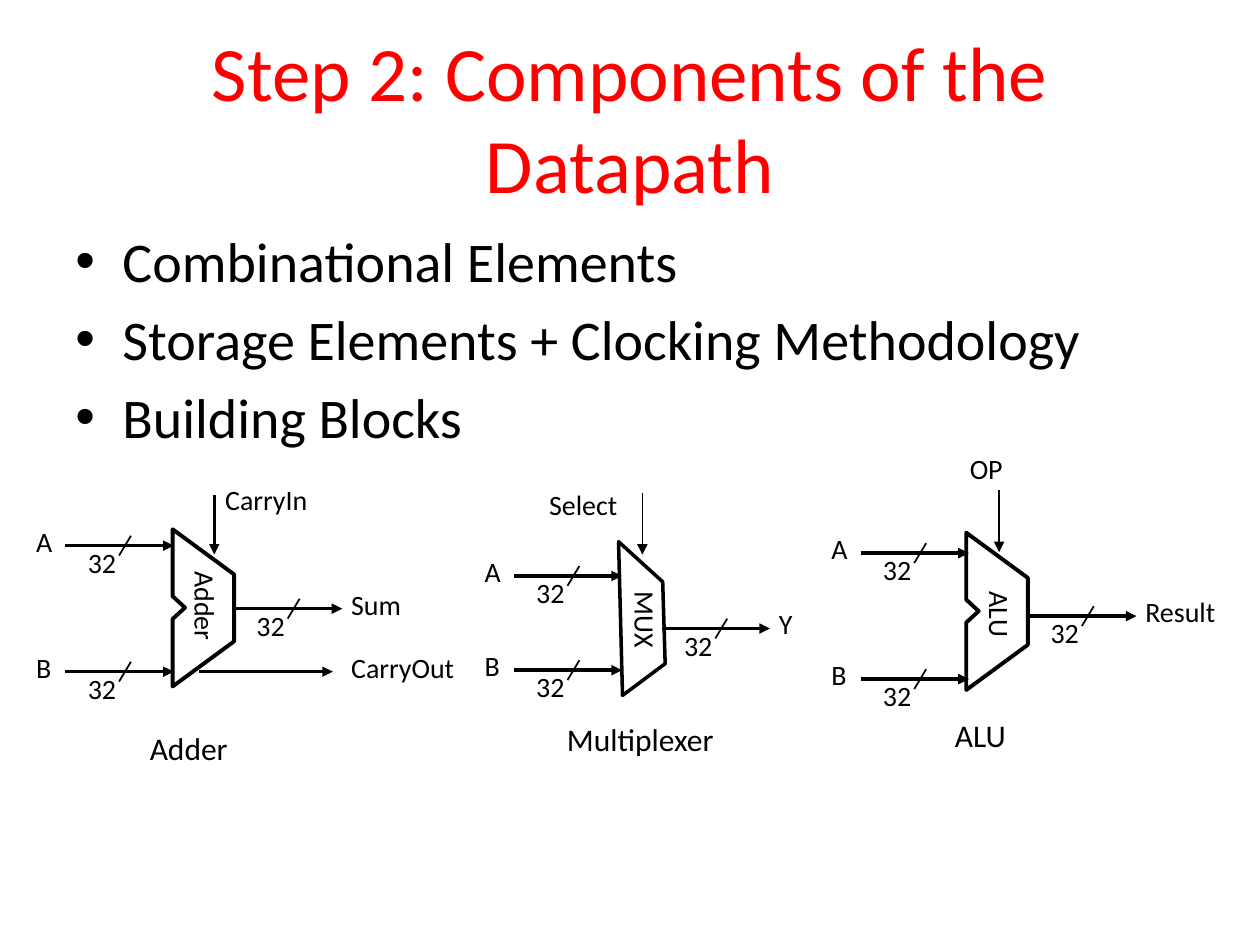
from dataclasses import dataclass
from lxml.etree import SubElement
from pptx import Presentation
from pptx.dml.color import RGBColor
from pptx.enum.shapes import MSO_CONNECTOR
from pptx.enum.text import MSO_ANCHOR, MSO_AUTO_SIZE, PP_ALIGN
from pptx.oxml.ns import qn
from pptx.util import Cm, Pt


@dataclass(frozen=True)
class Theme:
    font: str = "Calibri"
    red: RGBColor = RGBColor(255, 0, 0)
    black: RGBColor = RGBColor(0, 0, 0)
    title: int = 44
    body: int = 32
    name: int = 18
    label: int = 16
    thick: float = 2
    thin: float = 1


theme = Theme()


def text(home, words, left, top, width, high=0.94, size=theme.label,
         color=theme.black, align=PP_ALIGN.LEFT, anchor=MSO_ANCHOR.TOP,
         wrap=False, fit=MSO_AUTO_SIZE.SHAPE_TO_FIT_TEXT, turn=0, bullet=None):
    box = home.add_textbox(Cm(left), Cm(top), Cm(width), Cm(high))
    box.rotation = turn
    frame = box.text_frame
    frame.text = words
    frame.word_wrap = wrap
    frame.auto_size = fit
    frame.vertical_anchor = anchor
    for para in frame.paragraphs:
        para.alignment = align
        font = para.runs[0].font
        font.name, font.size, font.color.rgb = theme.font, Pt(size), color
        if bullet:
            para.space_before = Pt(6)
            props = para._p.get_or_add_pPr()
            props.set("marL", str(Cm(0.95)))
            props.set("indent", str(Cm(-0.95)))
            SubElement(props, qn("a:buFont"), typeface="Arial")
            SubElement(props, qn("a:buChar"), char=bullet)


def wire(home, start, end, width=theme.thick, arrow=True):
    line = home.add_connector(MSO_CONNECTOR.STRAIGHT, *map(Cm, start + end))
    line.line.color.rgb = theme.black
    line.line.width = Pt(width)
    if arrow:
        SubElement(line.line._get_or_add_ln(), qn("a:tailEnd"), type="triangle")
    SubElement(line._element.spPr, qn("a:effectLst"))


deck = Presentation()
deck.slide_width, deck.slide_height = Cm(25.4), Cm(19.05)
slide = deck.slides.add_slide(deck.slide_layouts[6])

text(slide.shapes, "Step 2: Components of the Datapath", 1.27, 0.76, 22.86, 3.18,
     size=theme.title, color=theme.red, align=PP_ALIGN.CENTER,
     anchor=MSO_ANCHOR.MIDDLE, wrap=True, fit=MSO_AUTO_SIZE.NONE)
text(slide.shapes,
     "Combinational Elements\nStorage Elements + Clocking Methodology\nBuilding Blocks",
     1.27, 4.45, 22.86, 5.1, size=theme.body, wrap=True,
     fit=MSO_AUTO_SIZE.NONE, bullet="•")

notched = [(0, 0), (0, 1.35), (0.25, 1.58), (0, 1.81), (0, 3.17), (1.24, 2.26), (1.24, 0.91)]
slanted = [(0, 0), (0.08, 3.1), (0.94, 2.46), (0.89, 0.81)]

units = [
    dict(ins=(1.32, 11, 13.54), out=(4.72, 12.27, "Sum", 1.52),
         pin=(4.32, 9.98, 11.18, theme.thick), sign=("CarryIn", 4.29, 9.6, 2.18),
         core=("Adder", 3.15, 11.79, 1.98), name=("Adder", 2.77, 14.58, 2.11),
         form=(3.48, 10.67, notched, 2.25)),
    dict(ins=(10.36, 11.61, 13.51), out=(13.34, 12.67, "Y", 0.79),
         pin=(12.95, 9.93, 11.18, theme.thin), sign=("Select", 10.82, 9.7, 2.31),
         core=("MUX", 12.17, 12.04, 1.68), name=("Multiplexer", 11.18, 14.4, 3.61),
         form=(12.47, 10.92, slanted, 2)),
    dict(ins=(17.35, 11.15, 13.69), out=(20.73, 12.42, "Result", 1.98),
         pin=(20.14, 9.88, 11.13, theme.thin), sign=("OP", 19.3, 8.97, 1.68),
         core=("ALU", 19.41, 11.96, 1.5), name=("ALU", 19, 14.3, 1.55),
         form=(19.48, 10.74, notched, 2.25)),
]

for unit in units:
    home = slide.shapes.add_group_shape().shapes
    left, high, low = unit["ins"]
    side, mid, word, width = unit["out"]
    for x, y in ((left, high), (left, low), (side, mid)):
        wire(home, (x, y), (x + 2.18, y))
        wire(home, (x + 1.32, y - 0.2), (x + 1.08, y + 0.2), theme.thin, arrow=False)
        text(home, "32", x + 0.2, y - 0.13, 1.08)
    text(home, "A", left - 0.84, high - 0.56, 0.84)
    text(home, "B", left - 0.84, low - 0.56, 0.82)
    text(home, word, side + 2.11, mid - 0.56, width)

    x, top, base, weight = unit["pin"]
    wire(home, (x, top), (x, base), weight)
    text(home, *unit["sign"])
    text(home, *unit["core"], turn=90)
    text(home, *unit["name"], high=1.02, size=theme.name)

    x, y, points, weight = unit["form"]
    spots = [(Cm(x + dx), Cm(y + dy)) for dx, dy in points]
    pen = home.build_freeform(*spots[0])
    pen.add_line_segments(spots[1:], close=True)
    shape = pen.convert_to_shape()
    shape.shadow.inherit = False
    shape.fill.background()
    shape.line.color.rgb = theme.black
    shape.line.width = Pt(weight)

    if word == "Sum":
        wire(home, (4.01, low), (6.71, low))
        text(home, "CarryOut", side + 2.11, low - 0.56, 2.62)

deck.save("out.pptx")
